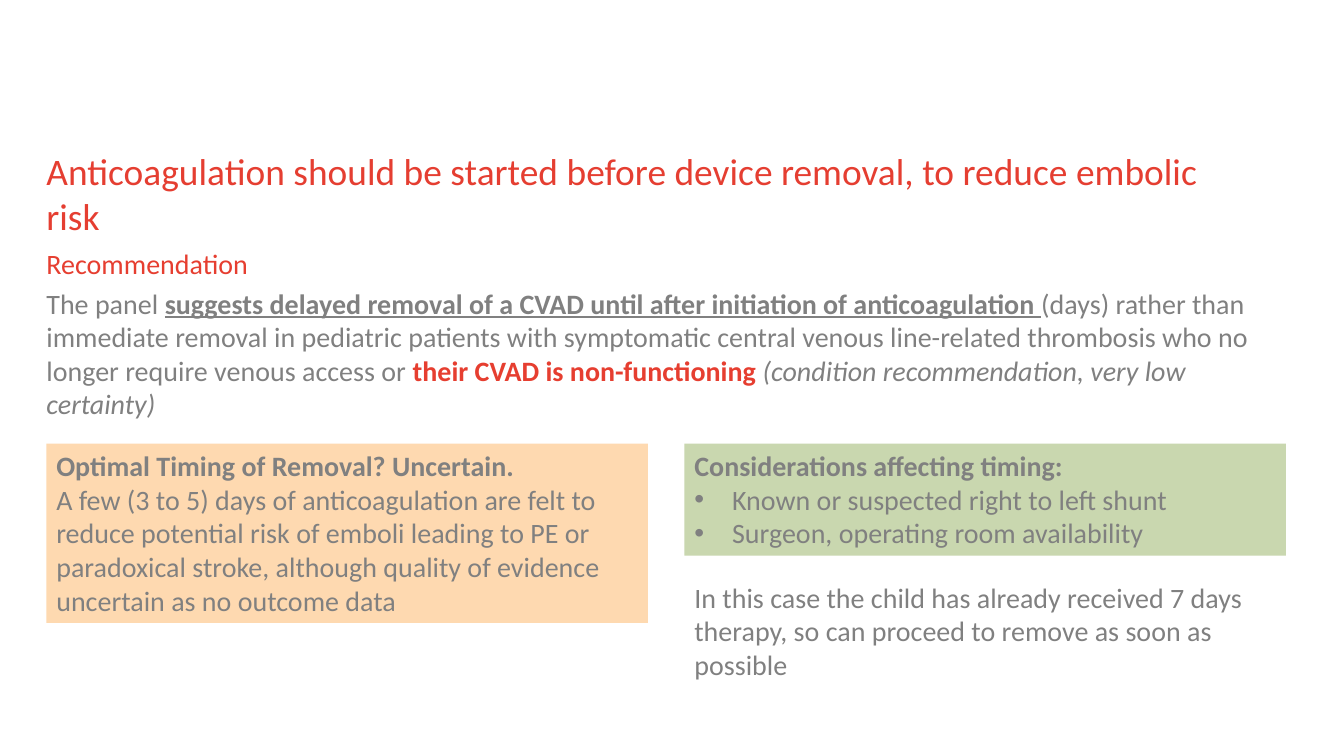
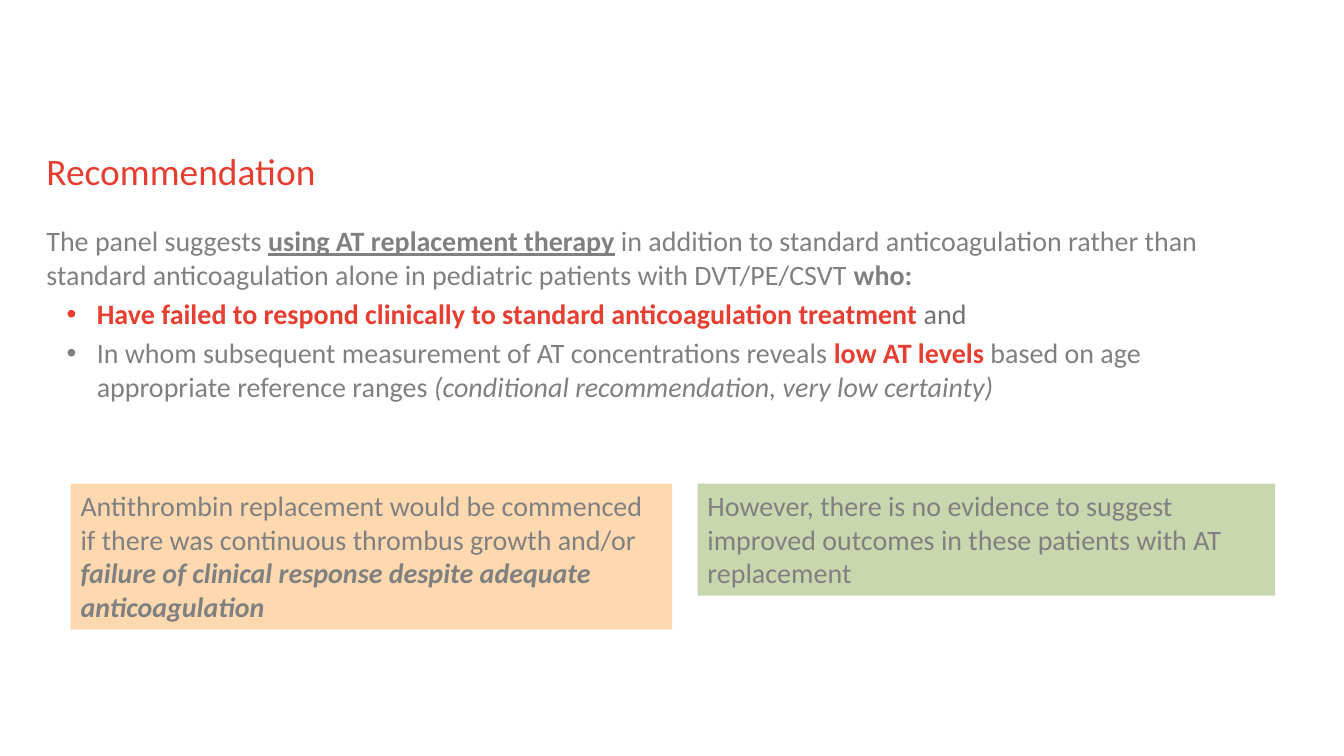
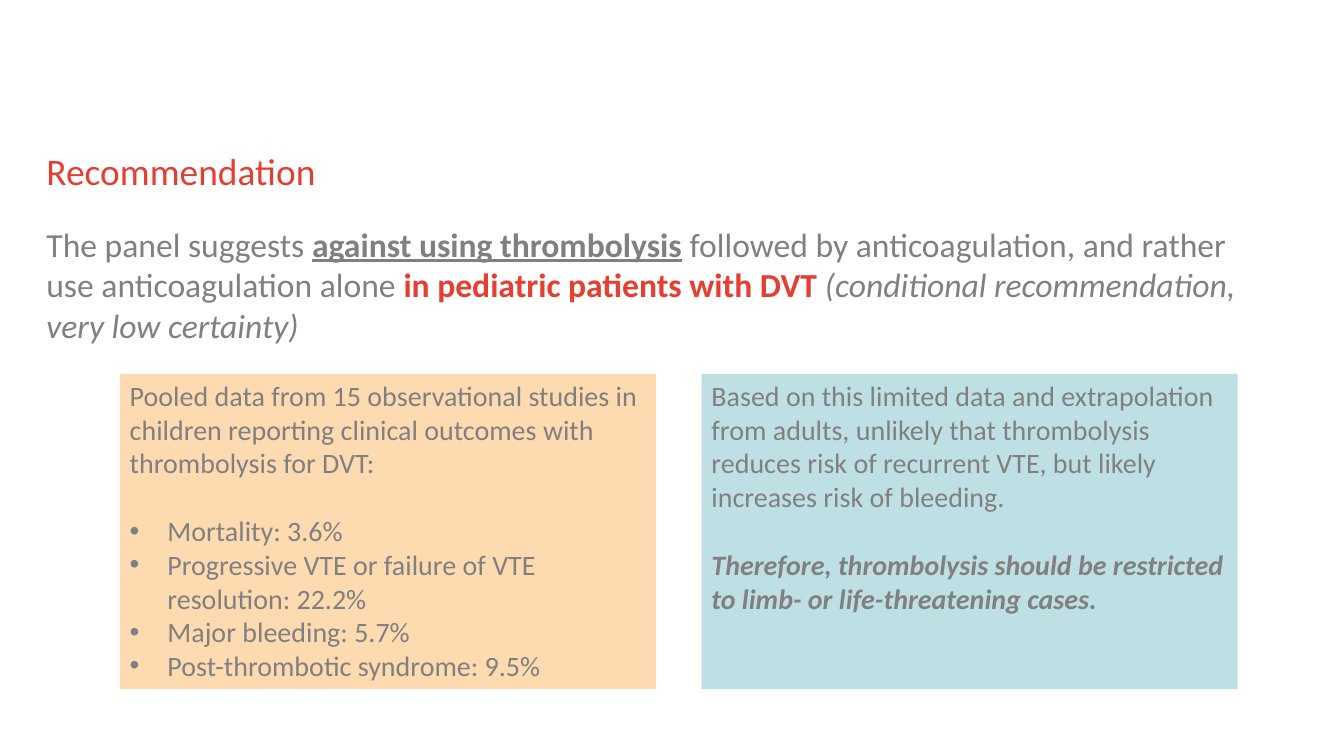
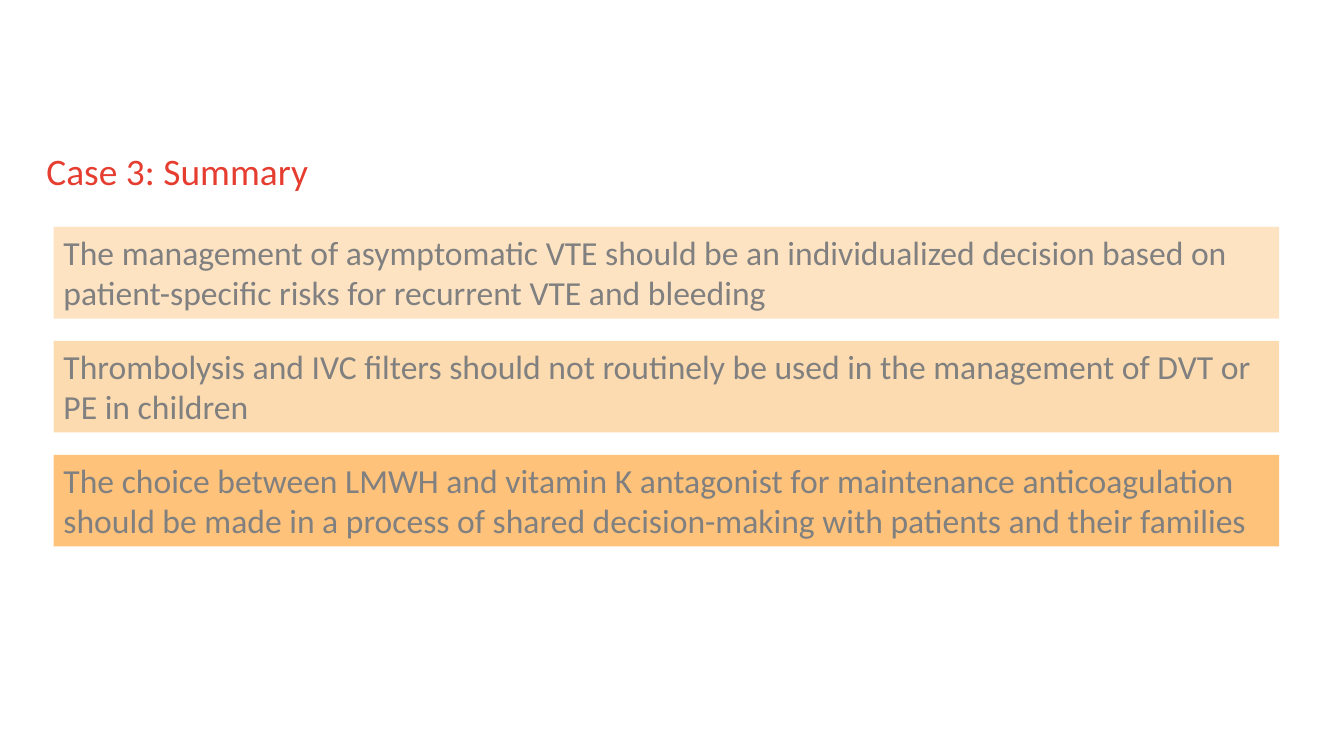
from dataclasses import dataclass

import lxml.etree
import pptx
import pptx.dml.color
import pptx.enum.shapes
import pptx.enum.text
import pptx.oxml.ns
import pptx.presentation
import pptx.slide
import pptx.text.text
import pptx.util

Cm = pptx.util.Cm
RGBColor = pptx.dml.color.RGBColor

FONT = "Calibri"
TITLE_RED = RGBColor(0xE5, 0x3E, 0x31)
RED = RGBColor(0xE6, 0x3E, 0x30)
GREY = RGBColor(0x80, 0x80, 0x80)
WARM_GREY = RGBColor(0x76, 0x71, 0x71)
ORANGE = RGBColor(0xFE, 0xD9, 0xB0)
SOFT_ORANGE = RGBColor(0xFD, 0xDA, 0xB0)
GREEN = RGBColor(0xC9, 0xD7, 0xAF)
BLUE = RGBColor(0xBE, 0xE0, 0xE4)
SUMMARY_FILLS = (
    RGBColor(0xFE, 0xE3, 0xC2),
    RGBColor(0xFD, 0xDB, 0xB0),
    RGBColor(0xFE, 0xC2, 0x7B),
)

MARGIN = Cm(1.17)
CONTENT_WIDTH = Cm(30.48)
BODY_GAP = 4
BLANK_LINE = 24.4


@dataclass(frozen=True)
class Span:
    text: str
    bold: bool = False
    italic: bool = False
    underline: bool = False
    color: RGBColor = GREY


@dataclass(frozen=True)
class Bullet:
    left: pptx.util.Length
    hanging: pptx.util.Length


@dataclass(frozen=True)
class Line:
    spans: tuple[Span, ...]
    before: float = 0
    bullet: Bullet | None = None


@dataclass(frozen=True)
class Panel:
    left: float
    top: float
    width: float
    height: float
    lines: tuple[Line, ...]
    fill: RGBColor | None = None
    size: float = 20


PANEL_BULLET = Bullet(Cm(0.95), Cm(0.95))
BODY_BULLET = Bullet(Cm(1.27), Cm(0.76))


def plain(text: str, bullet: Bullet | None = None, before: float = 0) -> Line:
    return Line((Span(text),), before, bullet)


def add_bullet(paragraph: pptx.text.text._Paragraph, bullet: Bullet, color: RGBColor) -> None:
    qn = pptx.oxml.ns.qn
    properties = paragraph._p.get_or_add_pPr()
    properties.set("marL", str(bullet.left))
    properties.set("indent", str(-bullet.hanging))
    bullet_color = lxml.etree.SubElement(properties, qn("a:buClr"))
    lxml.etree.SubElement(bullet_color, qn("a:srgbClr")).set("val", str(color))
    lxml.etree.SubElement(properties, qn("a:buFont")).set("typeface", "Arial")
    lxml.etree.SubElement(properties, qn("a:buChar")).set("char", "•")


def write_lines(frame: pptx.text.text.TextFrame, lines: tuple[Line, ...], size: float) -> None:
    frame.word_wrap = True
    frame.vertical_anchor = pptx.enum.text.MSO_ANCHOR.TOP
    for index, line in enumerate(lines):
        paragraph = frame.add_paragraph() if index else frame.paragraphs[0]
        paragraph.alignment = pptx.enum.text.PP_ALIGN.LEFT
        if line.before:
            paragraph.space_before = pptx.util.Pt(line.before)
        if line.bullet:
            add_bullet(paragraph, line.bullet, line.spans[0].color)
        paragraph.font.name = FONT
        paragraph.font.size = pptx.util.Pt(size)
        for span in line.spans:
            run = paragraph.add_run()
            run.text = span.text
            run.font.color.rgb = span.color
            if span.bold:
                run.font.bold = True
            if span.italic:
                run.font.italic = True
            if span.underline:
                run.font.underline = True


def add_text(
    slide: pptx.slide.Slide, top: float, height: float, lines: tuple[Line, ...], size: float = 20
) -> None:
    shape = slide.shapes.add_textbox(MARGIN, Cm(top), CONTENT_WIDTH, Cm(height))
    frame = shape.text_frame
    frame.margin_left = frame.margin_right = frame.margin_top = frame.margin_bottom = 0
    write_lines(frame, lines, size)


def add_panel(slide: pptx.slide.Slide, panel: Panel) -> None:
    place = Cm(panel.left), Cm(panel.top), Cm(panel.width), Cm(panel.height)
    if panel.fill is None:
        shape = slide.shapes.add_textbox(*place)
    else:
        shape = slide.shapes.add_shape(pptx.enum.shapes.MSO_SHAPE.RECTANGLE, *place)
        shape.shadow.inherit = False
        shape.fill.solid()
        shape.fill.fore_color.rgb = panel.fill
        shape.line.fill.background()
    write_lines(shape.text_frame, panel.lines, panel.size)


def add_slide(
    presentation: pptx.presentation.Presentation, title: str, panels: tuple[Panel, ...]
) -> pptx.slide.Slide:
    slide = presentation.slides.add_slide(presentation.slide_layouts[6])
    add_text(slide, 3.73, 1.45, (Line((Span(title, color=TITLE_RED),)),), 26.7)
    for panel in panels:
        add_panel(slide, panel)
    return slide


def build_timing(presentation: pptx.presentation.Presentation) -> None:
    panels = (
        Panel(1.17, 11.18, 15.16, 4.52, (
            Line((Span("Optimal Timing of Removal? Uncertain.", bold=True),)),
            plain("A few (3 to 5) days of anticoagulation are felt to reduce potential risk of emboli "
                  "leading to PE or paradoxical stroke, although quality of evidence uncertain as no "
                  "outcome data"),
        ), ORANGE),
        Panel(17.25, 11.18, 15.16, 2.82, (
            Line((Span("Considerations affecting timing:", bold=True),)),
            plain("Known or suspected right to left shunt", PANEL_BULLET),
            plain("Surgeon, operating room availability", PANEL_BULLET),
        ), GREEN),
        Panel(17.25, 14.5, 15.49, 2.82, (
            plain("In this case the child has already received 7 days therapy, so can proceed to "
                  "remove as soon as possible"),
        )),
    )
    title = "Anticoagulation should be started before device removal, to reduce embolic risk"
    slide = add_slide(presentation, title, panels)
    add_text(slide, 6.22, 4.45, (
        Line((Span("Recommendation", color=RED),)),
        Line((
            Span("The panel "),
            Span("suggests delayed removal of a CVAD until after initiation of anticoagulation ",
                 bold=True, underline=True),
            Span("(days) rather than immediate removal in pediatric patients with symptomatic central "
                 "venous line-related thrombosis who no longer require venous access or "),
            Span("their CVAD is non-functioning ", bold=True, color=RED),
            Span("(condition recommendation, very low certainty)", italic=True),
        ), BODY_GAP),
    ))


def build_replacement(presentation: pptx.presentation.Presentation) -> None:
    panels = (
        Panel(1.78, 12.19, 15.16, 3.68, (
            Line((
                Span("Antithrombin replacement would be commenced if there was continuous thrombus "
                     "growth and/or "),
                Span("failure of clinical response despite adequate anticoagulation",
                     bold=True, italic=True),
            )),
        ), ORANGE),
        Panel(17.58, 12.19, 14.55, 2.82, (
            plain("However, there is no evidence to suggest improved outcomes in these patients with "
                  "AT replacement"),
        ), GREEN),
    )
    slide = add_slide(presentation, "Recommendation", panels)
    add_text(slide, 5.64, 5.99, (
        Line((
            Span("The panel suggests "),
            Span("using AT replacement therapy", bold=True, underline=True),
            Span(" in addition to standard anticoagulation rather than standard anticoagulation alone "
                 "in pediatric patients with DVT/PE/CSVT "),
            Span("who:", bold=True),
        )),
        Line((
            Span("Have failed to respond clinically to standard anticoagulation treatment ",
                 bold=True, color=RED),
            Span("and", color=WARM_GREY),
        ), BODY_GAP, BODY_BULLET),
        Line((
            Span("In whom subsequent measurement of AT concentrations reveals "),
            Span("low AT levels ", bold=True, color=RED),
            Span("based on age appropriate reference ranges "),
            Span("(conditional recommendation, very low certainty)", italic=True),
        ), BODY_GAP, BODY_BULLET),
    ))


def build_thrombolysis(presentation: pptx.presentation.Presentation) -> None:
    panels = (
        Panel(3.02, 9.42, 13.51, 7.95, (
            plain("Pooled data from 15 observational studies in children reporting clinical outcomes "
                  "with thrombolysis for DVT:"),
            plain("Mortality: 3.6%", PANEL_BULLET, BLANK_LINE),
            plain("Progressive VTE or failure of VTE resolution: 22.2%", PANEL_BULLET),
            plain("Major bleeding: 5.7%", PANEL_BULLET),
            plain("Post-thrombotic syndrome: 9.5%", PANEL_BULLET),
        ), SOFT_ORANGE),
        Panel(17.68, 9.42, 13.51, 7.95, (
            plain("Based on this limited data and extrapolation from adults, unlikely that "
                  "thrombolysis reduces risk of recurrent VTE, but likely increases risk of bleeding."),
            Line((
                Span("Therefore, thrombolysis should be restricted to limb- or life-threatening cases.",
                     bold=True, italic=True),
            ), BLANK_LINE),
        ), BLUE),
    )
    slide = add_slide(presentation, "Recommendation", panels)
    add_text(slide, 5.64, 5.16, (
        Line((
            Span("The panel suggests "),
            Span("against using thrombolysis", bold=True, underline=True),
            Span(" followed by anticoagulation, and rather use anticoagulation alone "),
            Span("in pediatric patients with DVT ", bold=True, color=RED),
            Span("(conditional recommendation, very low certainty)", italic=True),
        )),
    ), 24)


def build_summary(presentation: pptx.presentation.Presentation) -> None:
    messages = (
        "The management of asymptomatic VTE should be an individualized decision based on "
        "patient-specific risks for recurrent VTE and bleeding",
        "Thrombolysis and IVC filters should not routinely be used in the management of DVT or PE "
        "in children",
        "The choice between LMWH and vitamin K antagonist for maintenance anticoagulation should be "
        "made in a process of shared decision-making with patients and their families",
    )
    panels = tuple(
        Panel(1.35, 5.72 + 2.87 * row, 30.89, 2.31, (plain(message),), fill, 24)
        for row, (message, fill) in enumerate(zip(messages, SUMMARY_FILLS))
    )
    add_slide(presentation, "Case 3: Summary", panels)


def main() -> None:
    presentation = pptx.Presentation()
    presentation.slide_width = Cm(33.87)
    presentation.slide_height = Cm(19.05)
    build_timing(presentation)
    build_replacement(presentation)
    build_thrombolysis(presentation)
    build_summary(presentation)
    presentation.save("out.pptx")


if __name__ == "__main__":
    main()
